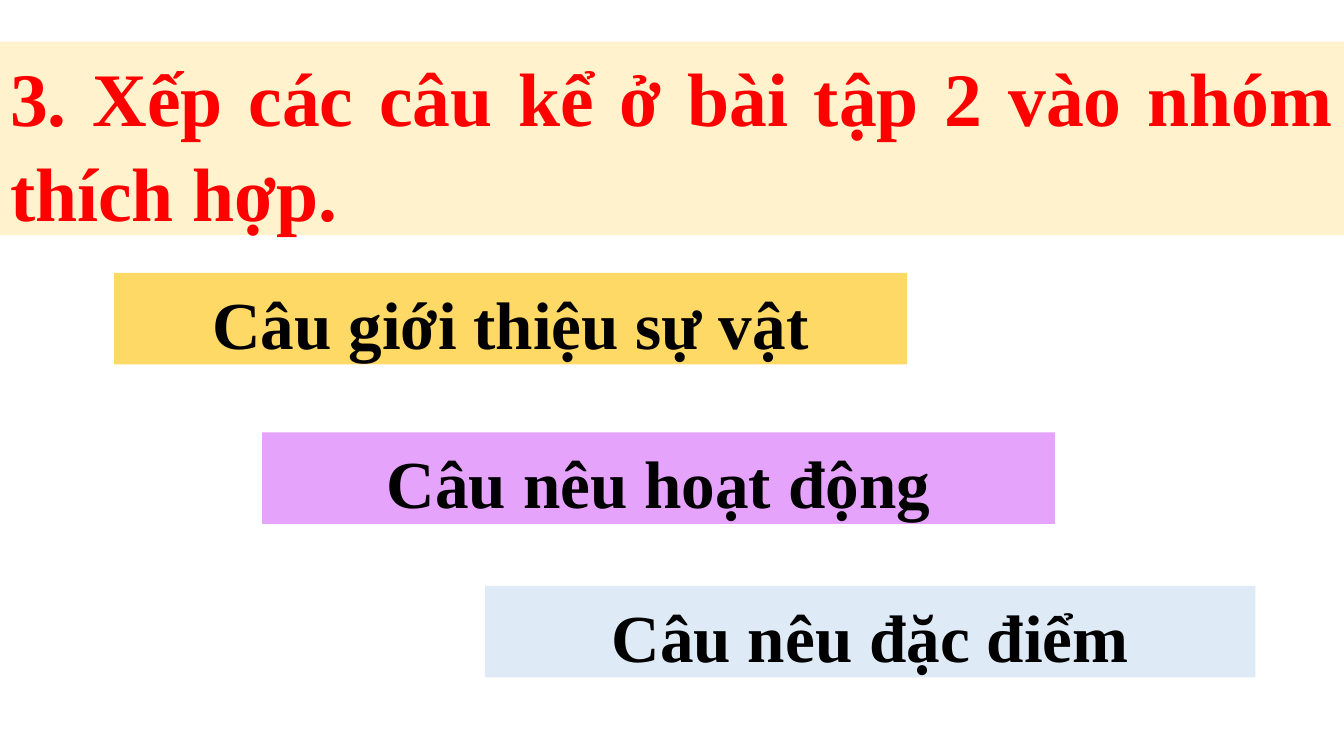
from pptx import Presentation
from pptx.dml.color import RGBColor
from pptx.enum.shapes import MSO_SHAPE
from pptx.enum.text import MSO_ANCHOR, MSO_AUTO_SIZE, PP_ALIGN
from pptx.util import Inches, Pt

CREAM = RGBColor(0xFF, 0xF2, 0xCC)
GOLD = RGBColor(0xFF, 0xD9, 0x66)
VIOLET = RGBColor(0xE6, 0xA3, 0xFB)
PALE_BLUE = RGBColor(0xDE, 0xEB, 0xF7)
RED = RGBColor(0xFF, 0x00, 0x00)
BLACK = RGBColor(0x00, 0x00, 0x00)

WIDTH, HEIGHT = Inches(13.33), Inches(7.5)
HANGING = Inches(0.38)
FRAME = {"word_wrap": True, "auto_size": MSO_AUTO_SIZE.NONE,
         "vertical_anchor": MSO_ANCHOR.TOP}
TITLE_FONT = {"name": "Times New Roman", "size": Pt(54), "bold": True}
GROUP_FONT = {**TITLE_FONT, "size": Pt(48)}

TITLE = "3. Xếp các câu kể ở bài tập 2 vào nhóm thích hợp."
TITLE_BOX = (0, 0.055, 1, 0.256)
GROUPS = [
    ("Câu giới thiệu sự vật", GOLD, (0.085, 0.361, 0.59, 0.121), True),
    ("Câu nêu hoạt động", VIOLET, (0.195, 0.572, 0.59, 0.121), True),
    ("Câu nêu đặc điểm", PALE_BLUE, (0.361, 0.775, 0.573, 0.121), False),
]


def set_all(target, values):
    for name, value in values.items():
        setattr(target, name, value)


def scale(box):
    x, y, w, h = box
    return [round(v) for v in (x * WIDTH, y * HEIGHT, w * WIDTH, h * HEIGHT)]


def fill_box(sp, text, fill, color, font, align, hanging):
    sp.fill.solid()
    sp.fill.fore_color.rgb = fill
    sp.line.fill.background()
    tf = sp.text_frame
    set_all(tf, FRAME)
    p = tf.paragraphs[0]
    set_all(p, {"alignment": align, "line_spacing": 1.05})
    if hanging:
        set_all(p._p.get_or_add_pPr(), {"marL": HANGING, "indent": -HANGING})
    r = p.add_run()
    r.text = text
    set_all(r.font, font)
    r.font.color.rgb = color


def add_title(s, box):
    sp = s.shapes.title
    set_all(sp, dict(zip(("left", "top", "width", "height"), scale(box))))
    fill_box(sp, TITLE, CREAM, RED, TITLE_FONT, PP_ALIGN.JUSTIFY, True)


def add_group(s, text, fill, box, hanging):
    sp = s.shapes.add_shape(MSO_SHAPE.RECTANGLE, *scale(box))
    sp.shadow.inherit = False
    fill_box(sp, text, fill, BLACK, GROUP_FONT, PP_ALIGN.CENTER, hanging)


def main():
    prs = Presentation()
    set_all(prs, {"slide_width": WIDTH, "slide_height": HEIGHT})
    s = prs.slides.add_slide(prs.slide_layouts[5])
    add_title(s, TITLE_BOX)
    for group in GROUPS:
        add_group(s, *group)
    prs.save("out.pptx")


if __name__ == "__main__":
    main()
